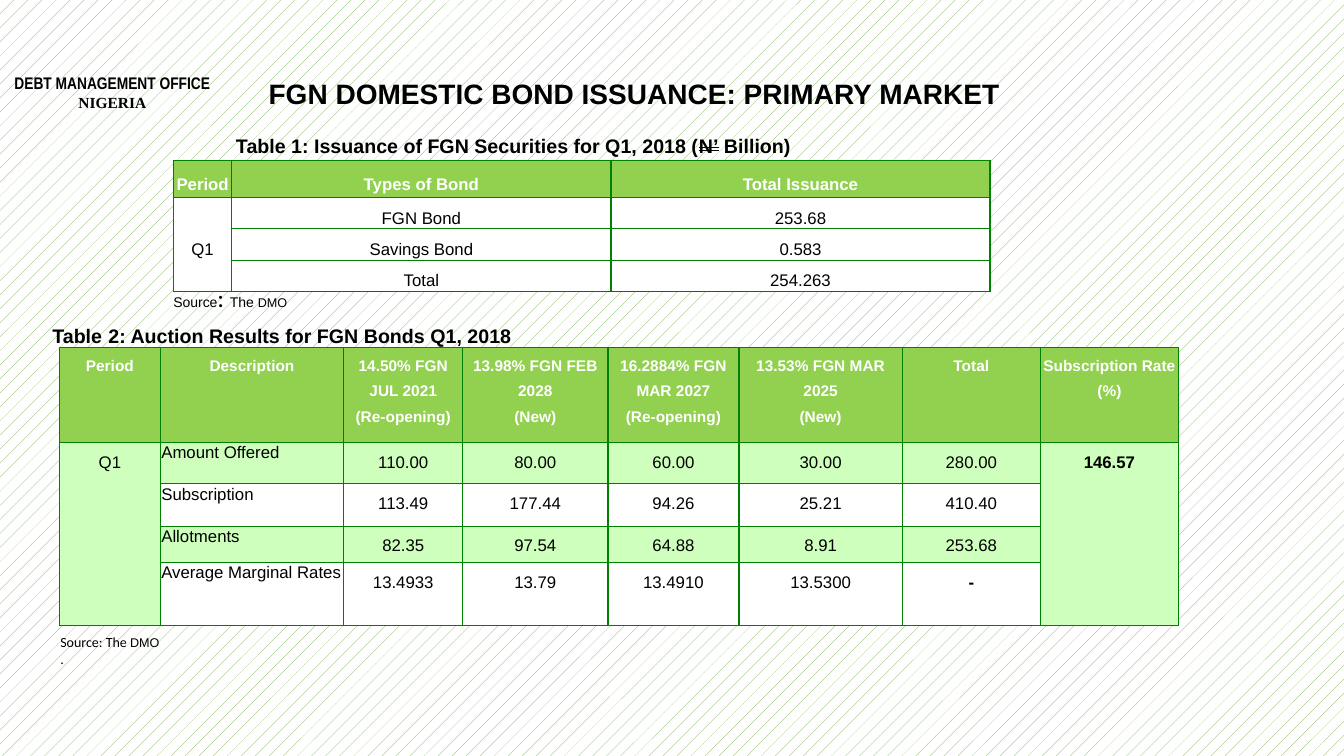
import pptx
import pptx.dml.color
import pptx.enum.dml
import pptx.enum.text
import pptx.oxml
import pptx.oxml.ns
import pptx.util

Inches = pptx.util.Inches
Pt = pptx.util.Pt
ALIGN = pptx.enum.text.PP_ALIGN
ANCHOR = pptx.enum.text.MSO_ANCHOR

COLORS = {
    "black": "000000",
    "white": "FFFFFF",
    "header": "92D050",
    "band": "CEFFBD",
    "border": "008000",
    "bottom": "1F4E78",
    "pattern": "70AD47",
}


def rgb(name):
    return pptx.dml.color.RGBColor.from_string(COLORS[name])


class SlideBuilder:
    def __init__(self, slide):
        self.slide = slide

    def pattern_background(self):
        fill = self.slide.background.fill
        fill.patterned()
        fill.pattern = pptx.enum.dml.MSO_PATTERN.PERCENT_5
        fill.fore_color.rgb = rgb("pattern")
        fill.back_color.rgb = rgb("white")

    def style(self, paragraph, size, bold=False, color="black", font="Arial"):
        paragraph.font.size = Pt(size)
        paragraph.font.bold = bold
        paragraph.font.name = font
        paragraph.font.color.rgb = rgb(color)

    def text(self, left, top, width, height, paragraphs, align=ALIGN.LEFT):
        """Each paragraph is (style, runs); a run is text, or (text, size, font)."""
        box = self.slide.shapes.add_textbox(
            Inches(left), Inches(top), Inches(width), Inches(height))
        frame = box.text_frame
        frame.word_wrap = True
        for index, (style, runs) in enumerate(paragraphs):
            paragraph = frame.paragraphs[0] if index == 0 else frame.add_paragraph()
            paragraph.alignment = align
            self.style(paragraph, **style)
            for item in runs:
                run = paragraph.add_run()
                if isinstance(item, str):
                    run.text = item
                else:
                    run.text, size, run.font.name = item
                    run.font.size = Pt(size)
        return frame

    def border(self, cell, bottom):
        properties = cell._tc.get_or_add_tcPr()
        sides = {side: ("border", 1) for side in "LRTB"}
        if bottom:
            sides["B"] = bottom
        for index, (side, (color, width)) in enumerate(sides.items()):
            line = pptx.oxml.parse_xml(
                f'<a:ln{side} {pptx.oxml.ns.nsdecls("a")} w="{Pt(width)}">'
                f'<a:solidFill><a:srgbClr val="{COLORS[color]}"/></a:solidFill>'
                f'</a:ln{side}>')
            properties.insert(index, line)

    def cell(self, cell, text, fill, anchor, bottom=None, centered=True, **style):
        cell.margin_left = cell.margin_right = cell.margin_top = Inches(0.01)
        cell.margin_bottom = 0
        cell.vertical_anchor = anchor
        cell.fill.solid()
        cell.fill.fore_color.rgb = rgb(fill)
        self.border(cell, bottom)
        cell.text = text
        for paragraph in cell.text_frame.paragraphs:
            paragraph.alignment = ALIGN.CENTER if centered else ALIGN.LEFT
            if centered:
                paragraph.line_spacing = 1.5
            self.style(paragraph, **style)

    def table(self, left, top, widths, heights, rows, merged_columns, header_size,
              bands, anchor=ANCHOR.TOP, left_column=None, bold_texts=(), bottom=None):
        """Draw a header row and body rows; merged columns span the whole body."""
        table = self.slide.shapes.add_table(
            len(rows), len(widths), Inches(left), Inches(top),
            Inches(sum(widths)), Inches(sum(heights))).table
        for column, width in zip(table.columns, widths):
            column.width = Inches(width)
        for row, height in zip(table.rows, heights):
            row.height = Inches(height)
        last = len(rows) - 1
        for row, texts in enumerate(rows):
            for column, text in enumerate(texts):
                header = row == 0
                band = 0 if column in merged_columns else (row - 1) % len(bands)
                self.cell(
                    table.cell(row, column), text,
                    "header" if header else bands[band], anchor,
                    bottom=bottom if row == last else None,
                    centered=header or column != left_column,
                    size=header_size if header else 12,
                    bold=header or text in bold_texts,
                    color="white" if header else "black")
        for column in merged_columns:
            table.cell(1, column).merge(table.cell(last, column))
            if bottom:
                cell = table.cell(1, column)
                for line in cell._tc.tcPr.findall(pptx.oxml.ns.qn("a:lnB")):
                    line.set("w", str(Pt(bottom[1])))
                    line.find(".//" + pptx.oxml.ns.qn("a:srgbClr")).set(
                        "val", COLORS[bottom[0]])


ISSUANCE = [
    ["Period", "Types of Bond", "Total Issuance"],
    ["Q1", "FGN Bond", "253.68"],
    ["", "Savings Bond", "0.583"],
    ["", "Total", "254.263"],
]
AUCTIONS = [
    ["Period", "Description", "14.50% FGN JUL 2021\n(Re-opening)",
     "13.98% FGN FEB 2028\n(New)", "16.2884% FGN MAR 2027\n(Re-opening)",
     "13.53% FGN MAR 2025\n(New)", "Total", "Subscription Rate (%)"],
    ["Q1", "Amount Offered", "110.00", "80.00", "60.00", "30.00", "280.00", "146.57"],
    ["", "Subscription", "113.49", "177.44", "94.26", "25.21", "410.40", ""],
    ["", "Allotments", "82.35", "97.54", "64.88", "8.91", "253.68", ""],
    ["", "Average Marginal Rates", "13.4933", "13.79", "13.4910", "13.5300", "-", ""],
]


def main():
    presentation = pptx.Presentation()
    presentation.slide_width = Inches(13.33)
    presentation.slide_height = Inches(7.5)
    builder = SlideBuilder(presentation.slides.add_slide(presentation.slide_layouts[6]))
    builder.pattern_background()

    caption = {"size": 14, "bold": True}
    builder.text(0, 0.67, 2.23, 0.56, [
        ({"size": 12, "bold": True, "font": "Arial Narrow"}, ["DEBT MANAGEMENT OFFICE"]),
        ({"size": 11, "bold": True, "font": "Times New Roman"}, ["NIGERIA"]),
    ], ALIGN.CENTER)
    issuance_caption = builder.text(0.47, 1.28, 7.47, 0.34, [
        (caption, ["Table 1: Issuance of FGN Securities for Q1, 2018 (", "N’", " Billion)"]),
    ], ALIGN.RIGHT)
    naira = issuance_caption.paragraphs[0].runs[1]
    naira.font._element.set("strike", "dblStrike")
    builder.text(0.42, 3.14, 7.01, 0.39, [
        (caption, ["Table", (" ", 16, "Arial"), "2: Auction Results for FGN Bonds Q1, 2018"]),
    ])
    builder.text(1.99, 0.71, 8.6, 0.44, [
        ({"size": 20, "bold": True}, ["FGN DOMESTIC BOND ISSUANCE: PRIMARY MARKET"]),
    ], ALIGN.CENTER)

    builder.table(1.72, 1.59, [0.58, 3.76, 3.76], [0.37] + [0.31] * 3, ISSUANCE,
                  merged_columns=[0], header_size=12, bands=["white"],
                  anchor=ANCHOR.MIDDLE, bottom=("bottom", 0.5))
    builder.table(0.59, 3.45, [1, 1.82, 1.18, 1.44, 1.3, 1.62, 1.37, 1.37],
                  [0.94, 0.41, 0.42, 0.36, 0.63], AUCTIONS,
                  merged_columns=[0, 7], header_size=11, bands=["band", "white"],
                  left_column=1, bold_texts=("146.57", "-"))

    builder.text(1.62, 2.75, 1.59, 0.4, [
        ({"size": 10}, ["Source", (": ", 18, "Calibri"), "The ", ("DMO", 9, "Arial")]),
    ])
    note = {"size": 10, "font": "Calibri"}
    builder.text(0.5, 6.24, 4.38, 0.44, [
        (note, ["Source: The ", ("DMO", 9, "Arial")]),
        (note, ["."]),
    ])
    presentation.save("out.pptx")


if __name__ == "__main__":
    main()
